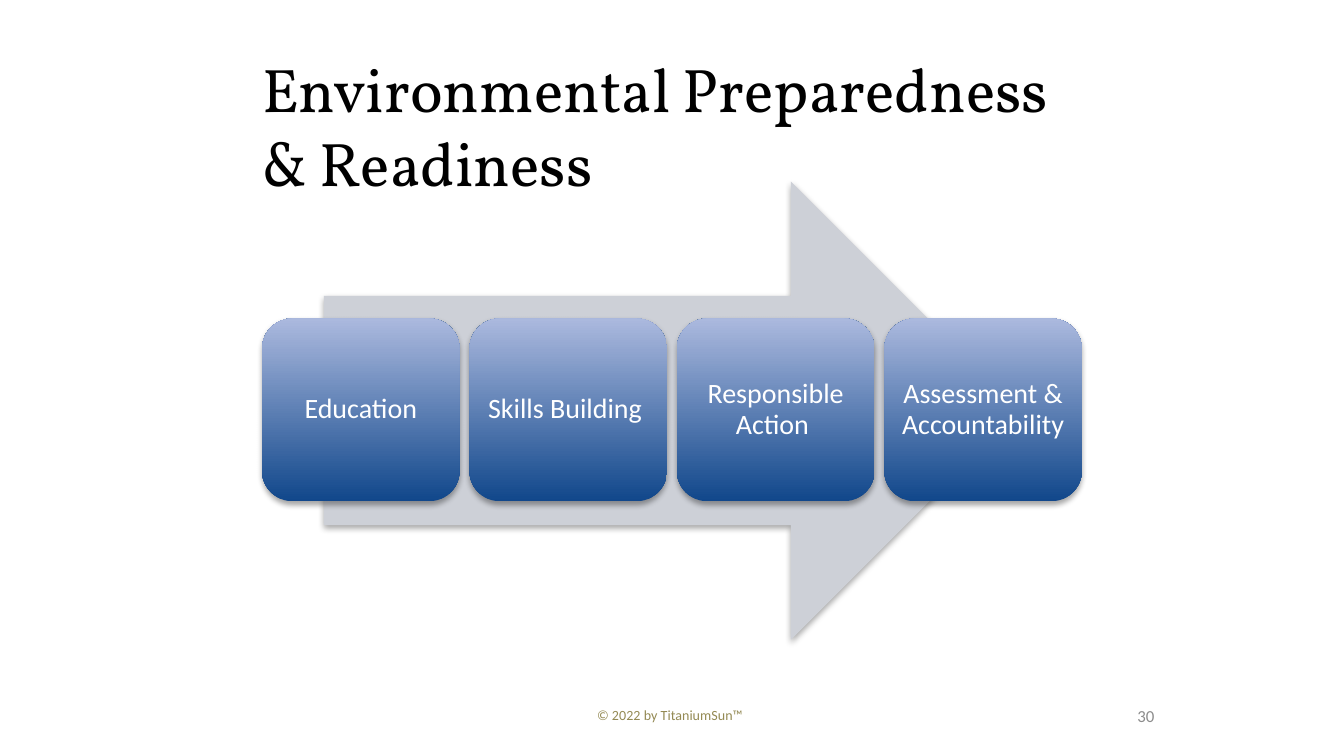
from lxml import etree
from pptx import Presentation
from pptx.dml.color import RGBColor
from pptx.enum import shapes, text
from pptx.oxml.ns import qn
from pptx.util import Inches, Pt

STEPS = ["Education", "Skills Building ", "Responsible Action ",
         "Assessment & Accountability "]
LEFT, SPAN = 1.95, 6.1
CARD_W, CARD_H, CARD_TOP = 1.47, 1.36, 2.37


def rgb(value):
    return RGBColor.from_string(value)


def write(frame, words, size, color, font="Calibri", align="LEFT",
          anchor="MIDDLE", inset=0, spacing=None):
    """Fill a text frame with one formatted paragraph."""
    frame.word_wrap = True
    frame.auto_size = text.MSO_AUTO_SIZE.NONE
    frame.vertical_anchor = getattr(text.MSO_ANCHOR, anchor)
    frame.margin_left = frame.margin_right = Inches(inset)
    frame.margin_top = frame.margin_bottom = Inches(inset)
    paragraph = frame.paragraphs[0]
    paragraph.alignment = getattr(text.PP_ALIGN, align)
    paragraph.line_spacing = spacing
    run = paragraph.add_run()
    run.text = words
    run.font.name = font
    run.font.size = Pt(size)
    run.font.color.rgb = rgb(color)


def add_label(slide, box, words, **style):
    label = slide.shapes.add_textbox(*map(Inches, box))
    write(label.text_frame, words, **style)


def add_soft_shadow(shape):
    """Cast a faint black shadow straight down."""
    shape.shadow.inherit = False
    effects = shape._element.spPr.find(qn("a:effectLst"))
    shadow = etree.SubElement(
        effects, qn("a:outerShdw"), blurRad=str(Pt(3.1)), dist=str(Pt(1.8)),
        dir="5400000", rotWithShape="0")
    black = etree.SubElement(shadow, qn("a:srgbClr"), val="000000")
    etree.SubElement(black, qn("a:alpha"), val="35000")


def add_shadowed_shape(slide, kind, box):
    shape = slide.shapes.add_shape(kind, *map(Inches, box))
    shape.line.fill.background()
    add_soft_shadow(shape)
    return shape


def add_arrow(slide):
    arrow = add_shadowed_shape(
        slide, shapes.MSO_SHAPE.RIGHT_ARROW, (2.41, 1.35, 5.18, 3.41))
    arrow.fill.solid()
    arrow.fill.fore_color.rgb = rgb("CDD0D7")


def add_step(slide, left, words):
    card = add_shadowed_shape(
        slide, shapes.MSO_SHAPE.ROUNDED_RECTANGLE,
        (left, CARD_TOP, CARD_W, CARD_H))
    card.fill.gradient()
    card.fill.gradient_angle = 90
    for stop, color, position in zip(
            card.fill.gradient_stops, ("11478B", "ABB9DE"), (0, 1)):
        stop.color.rgb = rgb(color)
        stop.position = position
    write(card.text_frame, words, size=15, color="FFFFFF", align="CENTER",
          inset=0.06, spacing=0.9)


def main():
    deck = Presentation()
    deck.slide_width = Inches(10)
    deck.slide_height = deck.slide_width * 9 // 16
    slide = deck.slides.add_slide(deck.slide_layouts[6])

    add_label(slide, (LEFT, 1.05, SPAN, 0.43),
              "Environmental Preparedness & Readiness",
              size=33, color="000000", font="Vollkorn", anchor="BOTTOM")
    add_label(slide, (8.14, 5.11, 0.45, 0.43), "30",
              size=9, color="8C8C8C", align="RIGHT")
    add_label(slide, (3.7, 5.21, 2.57, 0.23), "© 2022 by TitaniumSun™",
              size=7.5, color="948A54", align="CENTER", anchor="TOP",
              inset=0.05)

    add_arrow(slide)
    pitch = (SPAN - CARD_W) / (len(STEPS) - 1)
    for index, words in enumerate(STEPS):
        add_step(slide, LEFT + index * pitch, words)

    deck.save("out.pptx")


if __name__ == "__main__":
    main()
